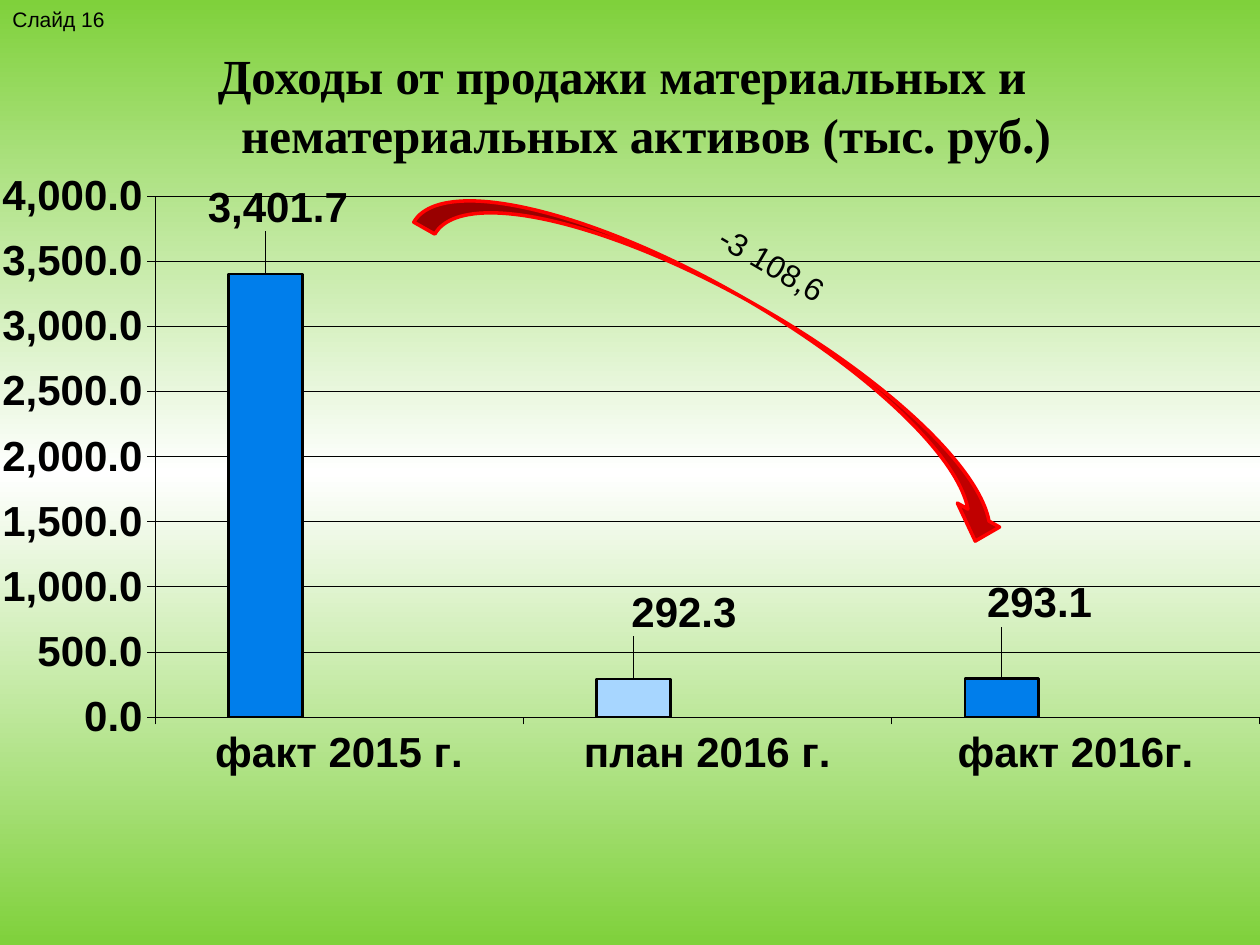
from lxml import etree
from pptx import Presentation
from pptx import util as u
from pptx.chart import data
from pptx.dml import color
from pptx.enum import chart as charts, shapes, text
from pptx.oxml import ns, parse_xml

SCALE = 914400 / 126
COLOURS = {
    "green": "7FD13B", "white": "FFFFFF", "black": "000000", "red": "FF0000",
    "dark_red": "C00000", "blue": "007EEB", "light_blue": "A7D6FF",
    "plum": "993366", "cream": "FFFFCC",
}
NUMBER_FORMAT = "#,##0.0"


def px(length):
    """Turn pixels into EMU."""
    return u.Emu(round(length * SCALE))


def rgb(name):
    """Look up a colour by its name."""
    return color.RGBColor.from_string(COLOURS[name])


def style_font(font, size, name="Arial", bold=False):
    """Format a font in black."""
    font.size, font.name, font.bold = u.Pt(size), name, bold
    font.color.rgb = rgb("black")


def style_line(line, name, width):
    """Give a line its colour and width."""
    line.color.rgb = rgb(name)
    line.width = u.Pt(width)


def paint_background(page, names):
    """Fill the page with a vertical gradient of evenly spaced colours."""
    fill = page.background.fill
    fill.gradient()
    fill.gradient_angle = 90
    stops = page._element.find(".//" + ns.qn("a:gsLst"))
    for stop in list(stops):
        stops.remove(stop)
    for index, name in enumerate(names):
        position = 100000 * index // (len(names) - 1)
        stop = etree.SubElement(stops, ns.qn("a:gs"), pos=str(position))
        etree.SubElement(stop, ns.qn("a:srgbClr"), val=COLOURS[name])


def make_layout(**values):
    """Build a manual chart layout."""
    items = "".join(f'<c:{key} val="{value}"/>' for key, value in values.items())
    return parse_xml(
        f'<c:layout {ns.nsdecls("c")}><c:manualLayout>{items}'
        "</c:manualLayout></c:layout>"
    )


def style_axis(axis):
    """Format the labels, line and ticks of an axis."""
    style_font(axis.tick_labels.font, 24, bold=True)
    style_line(axis.format.line, "black", 0.38)
    axis.major_tick_mark = charts.XL_TICK_MARK.OUTSIDE
    axis.minor_tick_mark = charts.XL_TICK_MARK.NONE


def style_points(series, points):
    """Colour each point and shift its label."""
    for index, (name, x, y) in enumerate(points):
        point = series.points[index]
        point.format.fill.solid()
        point.format.fill.fore_color.rgb = rgb(name)
        style_line(point.format.line, "black", 1.5)
        label = point.data_label
        style_font(label.font, 24, bold=True)
        label.position = charts.XL_LABEL_POSITION.OUTSIDE_END
        index_tag = series._element.findall(".//" + ns.qn("c:dLbl"))[index][0]
        index_tag.addnext(make_layout(x=x, y=y))


def add_income_chart(page):
    """Add the column chart of income."""
    chart_data = data.CategoryChartData(number_format=NUMBER_FORMAT)
    chart_data.categories = ["факт 2015 г.", "план 2016 г.", "факт 2016г."]
    chart_data.add_series("Series 1", [3401.7, 292.3, 293.1])
    for name in ("Series 2", "Series 3"):
        chart_data.add_series(name, [None] * 3)
    chart = page.shapes.add_chart(
        charts.XL_CHART_TYPE.COLUMN_CLUSTERED, 0, 0, px(1260), px(935), chart_data
    ).chart
    chart.has_legend = chart.has_title = False
    style_font(chart.font, 26.4, bold=True)

    plot = chart.plots[0]
    plot.gap_width, plot.overlap, plot.vary_by_categories = 200, 0, False
    for series, name in zip(plot.series, ("red", "plum", "cream")):
        series.invert_if_negative = False
        series.format.fill.solid()
        series.format.fill.fore_color.rgb = rgb(name)
        style_line(series.format.line, "black", 1.5)
    style_points(plot.series[0], [
        ("blue", 0.01, -0.04), ("light_blue", 0.04, -0.04), ("blue", 0.03, -0.05),
    ])

    for axis in (chart.category_axis, chart.value_axis):
        style_axis(axis)
    chart.category_axis.tick_label_position = charts.XL_TICK_LABEL_POSITION.LOW
    axis = chart.value_axis
    axis.minimum_scale, axis.maximum_scale, axis.major_unit = 0, 4000, 500
    style_line(axis.major_gridlines.format.line, "black", 0.38)
    axis.tick_labels.number_format = NUMBER_FORMAT
    axis.tick_labels.number_format_is_linked = False

    area = chart._chartSpace.find(".//" + ns.qn("c:plotArea"))
    for layout in area.findall(ns.qn("c:layout")):
        area.remove(layout)
    area.insert(0, make_layout(
        layoutTarget="inner", xMode="edge", yMode="edge",
        x=0.123, y=0.21, w=0.877, h=0.557,
    ))


def set_title(page, words):
    """Fill and place the title in front of the chart."""
    title = page.shapes.title
    title.left, title.top, title.width, title.height = map(px, (39, 39, 1166, 168))
    frame = title.text_frame
    frame.text = words
    frame.word_wrap = True
    frame.auto_size = text.MSO_AUTO_SIZE.NONE
    frame.vertical_anchor = text.MSO_ANCHOR.TOP
    para = frame.paragraphs[0]
    para.alignment = text.PP_ALIGN.CENTER
    para.space_before = u.Pt(5.6)
    indent = px(48)
    properties = para._p.get_or_add_pPr()
    properties.set("marL", str(indent))
    properties.set("indent", str(-indent))
    style_font(para.runs[0].font, 28, "Times New Roman", True)
    page.shapes._spTree.append(title._element)


def add_note(page, words, place, size, wrap=True, rotation=0):
    """Add a line of plain text."""
    box = page.shapes.add_textbox(*map(px, place))
    box.rotation = rotation
    frame = box.text_frame
    frame.text = words
    frame.word_wrap = wrap
    frame.auto_size = text.MSO_AUTO_SIZE.SHAPE_TO_FIT_TEXT
    style_font(frame.paragraphs[0].runs[0].font, size)


def add_fall_arrow(page):
    """Add the curved arrow that marks the fall in income."""
    arrow = page.shapes.add_shape(
        shapes.MSO_SHAPE.CURVED_DOWN_ARROW, *map(px, (394, 297, 670, 97))
    )
    arrow.rotation = 29.6
    arrow.shadow.inherit = False
    arrow.fill.solid()
    arrow.fill.fore_color.rgb = rgb("dark_red")
    style_line(arrow.line, "red", 2)


def main():
    """Build the slide and save it."""
    deck = Presentation()
    deck.slide_width, deck.slide_height = px(1260), px(945)
    page = deck.slides.add_slide(deck.slide_layouts[5])
    paint_background(page, ["green", "white", "green"])
    add_note(page, "Слайд 16", (0, 0, 118, 64), 12)
    add_income_chart(page)
    set_title(page, "Доходы от продажи материальных и нематериальных активов (тыс. руб.)")
    add_fall_arrow(page)
    add_note(page, "-3 108,6", (702, 239, 142, 50), 18, wrap=False, rotation=30.4)
    deck.save("out.pptx")


if __name__ == "__main__":
    main()
